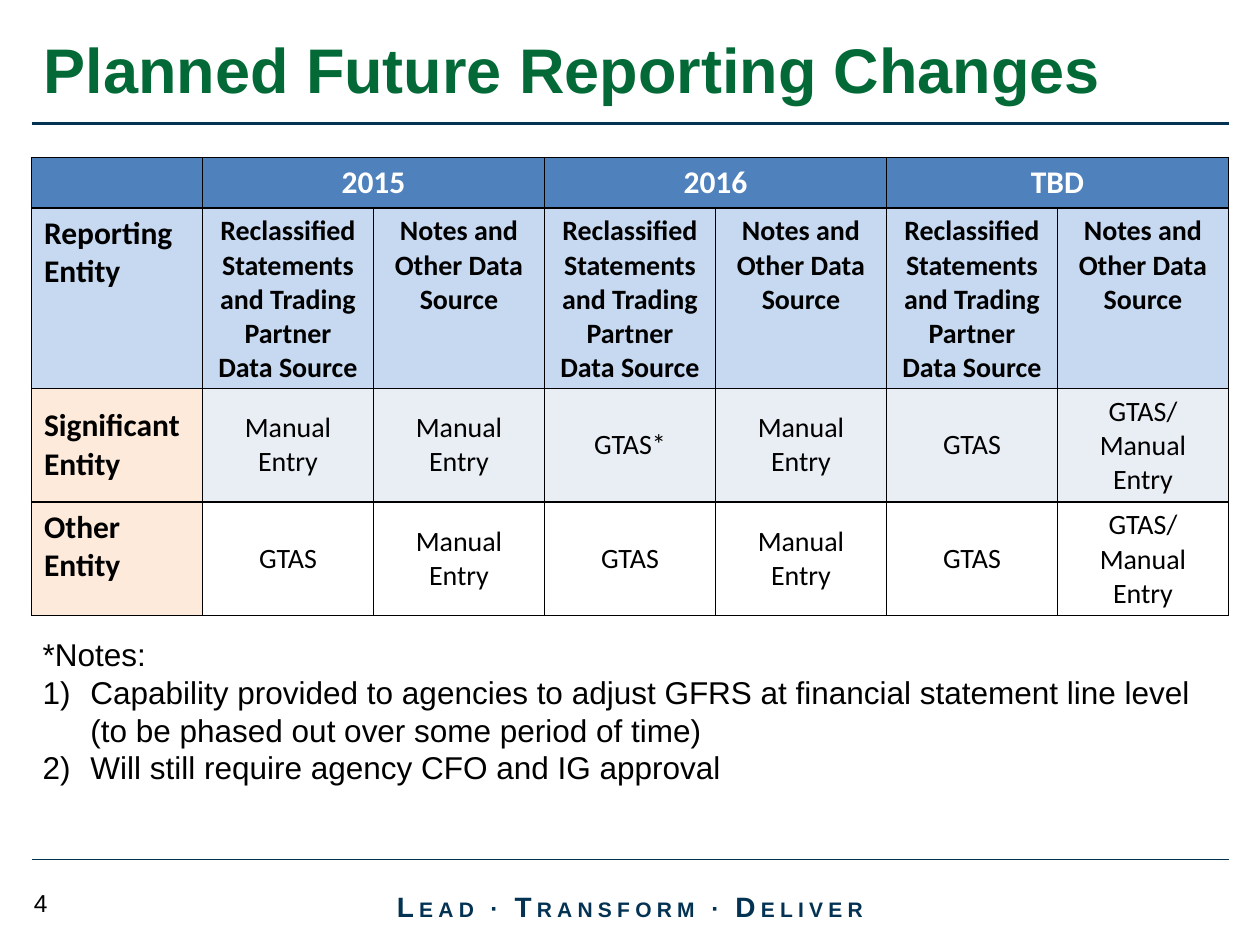
from dataclasses import dataclass

from lxml import etree
from pptx import Presentation
from pptx.dml.color import RGBColor
from pptx.enum.shapes import MSO_CONNECTOR
from pptx.enum.text import MSO_ANCHOR, PP_ALIGN
from pptx.oxml.ns import qn
from pptx.util import Inches, Pt

STRAIGHT = MSO_CONNECTOR.STRAIGHT
TOP, MIDDLE = MSO_ANCHOR.TOP, MSO_ANCHOR.MIDDLE
LEFT, CENTER = PP_ALIGN.LEFT, PP_ALIGN.CENTER
NAVY, GREEN, BLACK, WHITE = "043253", "036A37", "000000", "FFFFFF"
HEADER_BLUE, PALE_BLUE, PEACH, BAND = "4F81BD", "C6D9F1", "FDEADA", "E9EDF4"
MARGIN, CONTENT_WIDTH = 0.25, 9.5
ROW_HEIGHTS = (0.4, 1.41, 0.89, 0.89)
YEARS = ("2015", "2016", "TBD")
SOURCES = (
    "Reclassified Statements and Trading Partner Data Source",
    "Notes and Other Data Source",
)
MANUAL, EITHER = "Manual Entry", "GTAS/ Manual Entry"
NOTES = (
    "Capability provided to agencies to adjust GFRS at financial statement line level "
    "(to be phased out over some period of time)",
    "Will still require agency CFO and IG approval",
)
MOTTO = ("Lead", "Transform", "Deliver")


@dataclass(frozen=True)
class TextStyle:
    """Character formatting of a run."""

    size: float
    color: str = BLACK
    bold: bool = False
    font: str = "Arial"
    spacing: float = 0


@dataclass(frozen=True)
class CellLook:
    """Fill, text style and placement of a table cell."""

    fill: str | None
    style: TextStyle
    align: PP_ALIGN = CENTER
    anchor: MSO_ANCHOR = MIDDLE


@dataclass(frozen=True)
class TableRow:
    """A labelled row with its values and their looks."""

    label: str
    values: tuple[str, ...]
    label_look: CellLook
    value_look: CellLook


LABEL = TextStyle(18, bold=True, font="Calibri")
SUBHEAD = TextStyle(16, bold=True, font="Calibri")
VALUE = TextStyle(16, font="Calibri")
YEAR_LOOK = CellLook(HEADER_BLUE, TextStyle(18, WHITE, True, "Calibri"), anchor=TOP)
ROWS = (
    TableRow("Reporting Entity", SOURCES * len(YEARS),
             CellLook(PALE_BLUE, LABEL, LEFT, TOP), CellLook(PALE_BLUE, SUBHEAD, anchor=TOP)),
    TableRow("Significant Entity", (MANUAL, MANUAL, "GTAS*", MANUAL, "GTAS", EITHER),
             CellLook(PEACH, LABEL, LEFT), CellLook(BAND, VALUE)),
    TableRow("Other Entity", ("GTAS", MANUAL, "GTAS", MANUAL, "GTAS", EITHER),
             CellLook(PEACH, LABEL, LEFT, TOP), CellLook(None, VALUE)),
)


def rgb(color: str) -> RGBColor:
    """Turn a hex string into a colour."""
    return RGBColor.from_string(color)


def add_run(paragraph, text: str, style: TextStyle) -> None:
    """Append one formatted run."""
    run = paragraph.add_run()
    run.text = text
    run.font.size = Pt(style.size)
    run.font.name = style.font
    run.font.bold = style.bold
    run.font.color.rgb = rgb(style.color)
    if style.spacing:
        run.font._element.set("spc", str(int(style.spacing * 100)))


def add_text_frame(slide, left: float, top: float, width: float, height: float, anchor=TOP):
    """Add a wrapping text box and return its text frame."""
    shape = slide.shapes.add_textbox(Inches(left), Inches(top), Inches(width), Inches(height))
    shape.text_frame.word_wrap = True
    shape.text_frame.vertical_anchor = anchor
    return shape.text_frame


def add_rule(slide, top: float, weight: float) -> None:
    """Draw a horizontal rule across the content width."""
    right = MARGIN + CONTENT_WIDTH
    connector = slide.shapes.add_connector(
        STRAIGHT, Inches(MARGIN), Inches(top), Inches(right), Inches(top))
    connector.line.color.rgb = rgb(NAVY)
    connector.line.width = Pt(weight)
    etree.SubElement(connector._element.spPr, qn("a:effectLst"))


def add_borders(cell) -> None:
    """Give a cell thin black borders on every side."""
    properties = cell._tc.get_or_add_tcPr()
    for position, side in enumerate(("a:lnL", "a:lnR", "a:lnT", "a:lnB")):
        line = etree.Element(qn(side), w=str(Pt(1)))
        fill = etree.SubElement(line, qn("a:solidFill"))
        etree.SubElement(fill, qn("a:srgbClr"), val=BLACK)
        properties.insert(position, line)


def fill_cell(cell, text: str, look: CellLook) -> None:
    """Write and format the content of a cell."""
    cell.vertical_anchor = look.anchor
    if look.fill:
        cell.fill.solid()
        cell.fill.fore_color.rgb = rgb(look.fill)
    else:
        cell.fill.background()
    paragraph = cell.text_frame.paragraphs[0]
    paragraph.alignment = look.align
    if text:
        add_run(paragraph, text, look.style)
    add_borders(cell)


def add_reporting_table(slide) -> None:
    """Build the table of data sources by year and entity."""
    column_count = 1 + len(SOURCES) * len(YEARS)
    table = slide.shapes.add_table(
        len(ROW_HEIGHTS), column_count, Inches(MARGIN), Inches(1.25),
        Inches(CONTENT_WIDTH), Inches(sum(ROW_HEIGHTS))).table
    for row, height in zip(table.rows, ROW_HEIGHTS):
        row.height = Inches(height)
    for column in table.columns:
        column.width = Inches(CONTENT_WIDTH / column_count)
    header = [""]
    for year in YEARS:
        header += [year, ""]
    for column, text in enumerate(header):
        fill_cell(table.cell(0, column), text, YEAR_LOOK)
        if text:
            table.cell(0, column).merge(table.cell(0, column + 1))
    for index, row in enumerate(ROWS, start=1):
        fill_cell(table.cell(index, 0), row.label, row.label_look)
        for column, value in enumerate(row.values, start=1):
            fill_cell(table.cell(index, column), value, row.value_look)


def add_notes(slide) -> None:
    """Add the heading and numbered notes below the table."""
    style = TextStyle(18)
    frame = add_text_frame(slide, 0.24, 4.99, CONTENT_WIDTH, 1.31)
    add_run(frame.paragraphs[0], "*Notes:", style)
    for note in NOTES:
        paragraph = frame.add_paragraph()
        properties = paragraph._p.get_or_add_pPr()
        properties.set("marL", str(Inches(0.38)))
        properties.set("indent", str(Inches(-0.38)))
        etree.SubElement(properties, qn("a:buAutoNum"), type="arabicParenR")
        add_run(paragraph, note, style)


def add_motto(slide) -> None:
    """Add the spaced small-capital motto in the footer."""
    paragraph = add_text_frame(slide, 2.83, 6.99, 4.34, 0.4, MIDDLE).paragraphs[0]
    paragraph.alignment = CENTER
    for index, word in enumerate(MOTTO):
        if index:
            add_run(paragraph, "∙ ", TextStyle(14, NAVY, True, spacing=3))
        ending = " " if index < len(MOTTO) - 1 else ""
        add_run(paragraph, word[0], TextStyle(16, NAVY, True, spacing=3))
        add_run(paragraph, word[1:].upper() + ending, TextStyle(12, NAVY, True, spacing=3))


def main() -> None:
    """Build and save the presentation."""
    presentation = Presentation()
    presentation.slide_width, presentation.slide_height = Inches(10), Inches(7.5)
    slide = presentation.slides.add_slide(presentation.slide_layouts[6])
    add_rule(slide, 6.82, 0.75)
    add_motto(slide)
    add_rule(slide, 0.98, 2.25)
    page_number = add_text_frame(slide, 0.17, 7, 1.25, 0.33)
    add_run(page_number.paragraphs[0], "4", TextStyle(14))
    add_reporting_table(slide)
    title = add_text_frame(slide, MARGIN, 0.17, CONTENT_WIDTH, 0.75, MIDDLE)
    add_run(title.paragraphs[0], "Planned Future Reporting Changes", TextStyle(36, GREEN, True))
    add_notes(slide)
    presentation.save("out.pptx")


if __name__ == "__main__":
    main()
